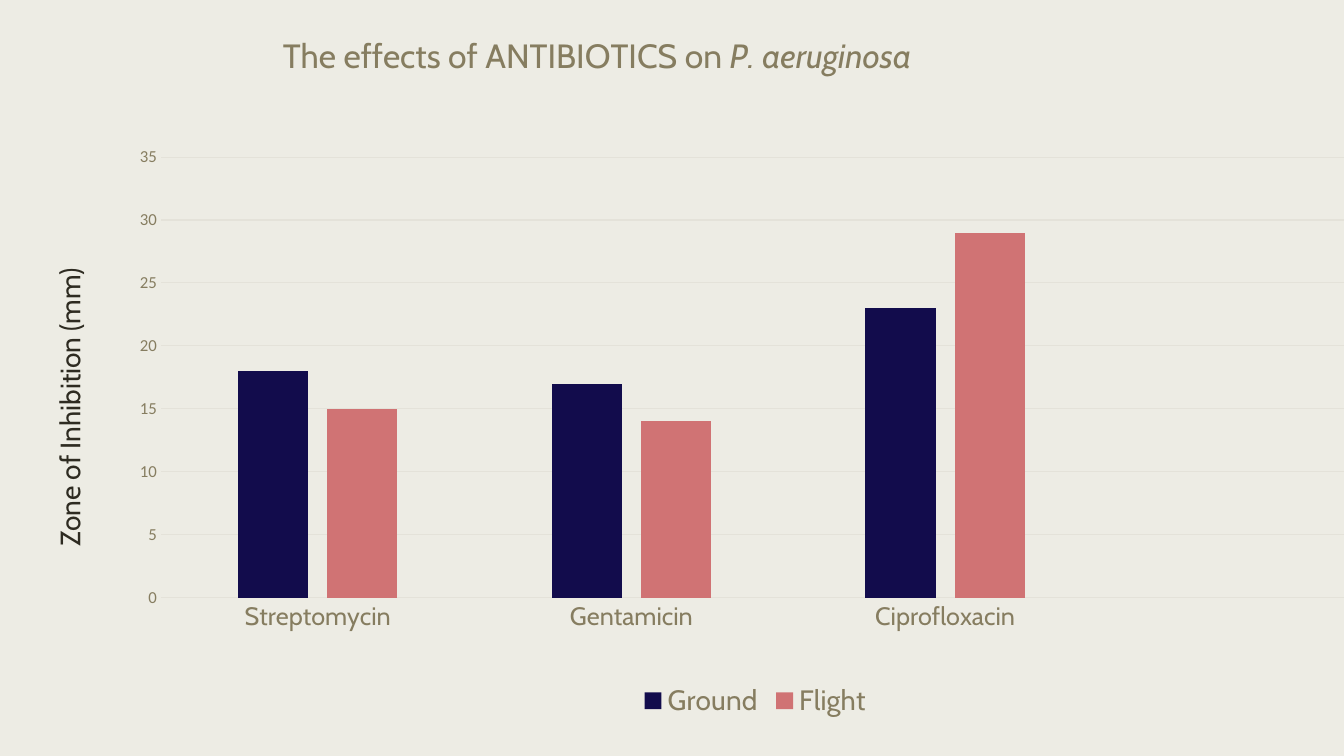
from lxml import etree
from pptx import Presentation
from pptx.chart import data
from pptx.dml import color
from pptx.enum import chart as ch, text
from pptx.oxml import ns
from pptx.util import Pt


def rgb(value):
    return color.RGBColor.from_string(value)


class Deck:
    """Style and current slide."""
    PAPER, OLIVE, INK, GRID = "EDECE4", "867D60", "2E2B21", "E4E2D9"
    HEAD, BODY = "Cabin", "Calibri"

    def __init__(self):
        self.prs = Presentation()
        self.prs.slide_width, self.prs.slide_height = Pt(960), Pt(540)
        self.slide = self.prs.slides.add_slide(self.prs.slide_layouts[6])
        fill = self.slide.background.fill
        fill.solid()
        fill.fore_color.rgb = rgb(self.PAPER)

    def font(self, font, size, colour, name, italic=False):
        font.size, font.name = Pt(size), name
        font.bold, font.italic = False, italic
        font.color.rgb = rgb(colour)

    def run(self, paragraph, words, size, colour, italic=False):
        run = paragraph.add_run()
        run.text = words
        self.font(run.font, size, colour, self.HEAD, italic)

    def line(self, line):
        line.color.rgb, line.width = rgb(self.GRID), Pt(0.75)

    def layout(self, parent, index, **settings):
        """Place a chart part by fractions of the chart area."""
        layout = parent.find(ns.qn("c:layout"))
        if layout is None:
            layout = etree.Element(ns.qn("c:layout"))
            parent.insert(index, layout)
        manual = etree.SubElement(layout, ns.qn("c:manualLayout"))
        for tag, value in settings.items():
            etree.SubElement(manual, ns.qn("c:" + tag)).set("val", str(value))

    def side_label(self, words, left, top, width, height):
        """Text that reads upwards."""
        box = self.slide.shapes.add_textbox(Pt(left), Pt(top), Pt(width), Pt(height))
        box.rotation = 180
        frame = box.text_frame
        frame.word_wrap = True
        frame.auto_size = text.MSO_AUTO_SIZE.SHAPE_TO_FIT_TEXT
        frame.vertical_anchor = text.MSO_ANCHOR.TOP
        frame._txBody.bodyPr.set("vert", "eaVert")
        self.run(frame.paragraphs[0], words, 20, self.INK)

    def columns(self, categories, series, title_runs, left, top, width, height):
        chart_data = data.CategoryChartData()
        chart_data.categories = categories
        for name, values, _ in series:
            chart_data.add_series(name, values)
        chart = self.slide.shapes.add_chart(
            ch.XL_CHART_TYPE.COLUMN_CLUSTERED, Pt(left), Pt(top), Pt(width),
            Pt(height), chart_data).chart
        self.font(chart.font, 10, self.INK, self.BODY)

        # Columns
        plot = chart.plots[0]
        plot.gap_width, plot.overlap, plot.vary_by_categories = 219, -27, False
        for column, (_, _, colour) in zip(plot.series, series):
            column.format.fill.solid()
            column.format.fill.fore_color.rgb = rgb(colour)
        plot_area = chart._chartSpace.find(".//" + ns.qn("c:plotArea"))
        self.layout(plot_area, 0, layoutTarget="inner", xMode="edge", yMode="edge",
                    x=0.05, y=0.19, w=0.95, h=0.63)

        # Axes
        drugs, zone = chart.category_axis, chart.value_axis
        for axis, size, name in ((drugs, 18, self.HEAD), (zone, 12, self.BODY)):
            axis.major_tick_mark = axis.minor_tick_mark = ch.XL_TICK_MARK.NONE
            self.font(axis.tick_labels.font, size, self.OLIVE, name)
        self.line(drugs.format.line)
        zone.format.line.fill.background()
        zone.minimum_scale, zone.maximum_scale, zone.major_unit = 0, 35, 5
        zone.has_major_gridlines = True
        self.line(zone.major_gridlines.format.line)

        # Chart title
        chart.has_title = True
        title = chart.chart_title
        for words, italic in title_runs:
            self.run(title.text_frame.paragraphs[0], words, 24, self.OLIVE, italic)
        title.include_in_layout = False
        self.layout(title._element, 1, xMode="edge", yMode="edge", x=0.14, y=0.01)

        # Legend
        chart.has_legend = True
        chart.legend.position = ch.XL_LEGEND_POSITION.BOTTOM
        chart.legend.include_in_layout = False
        self.font(chart.legend.font, 20, self.OLIVE, self.HEAD)


def main():
    deck = Deck()

    # Inhibition chart, with one empty place at the right
    antibiotics = ["Streptomycin", "Gentamicin", "Ciprofloxacin", ""]
    conditions = [("Ground", (18, 17, 23, None), "120C4C"),
                  ("Flight", (15, 14, 29, None), "D07374")]
    heading = [("The effects of ANTIBIOTICS on ", False), ("P. aeruginosa", True)]
    deck.columns(antibiotics, conditions, heading, 67.7, 17.3, 943.9, 499.7)

    # Value axis label
    deck.side_label("Zone of Inhibition (mm)", 33.8, 118.8, 38.9, 278.6)

    deck.prs.save("out.pptx")


if __name__ == "__main__":
    main()
